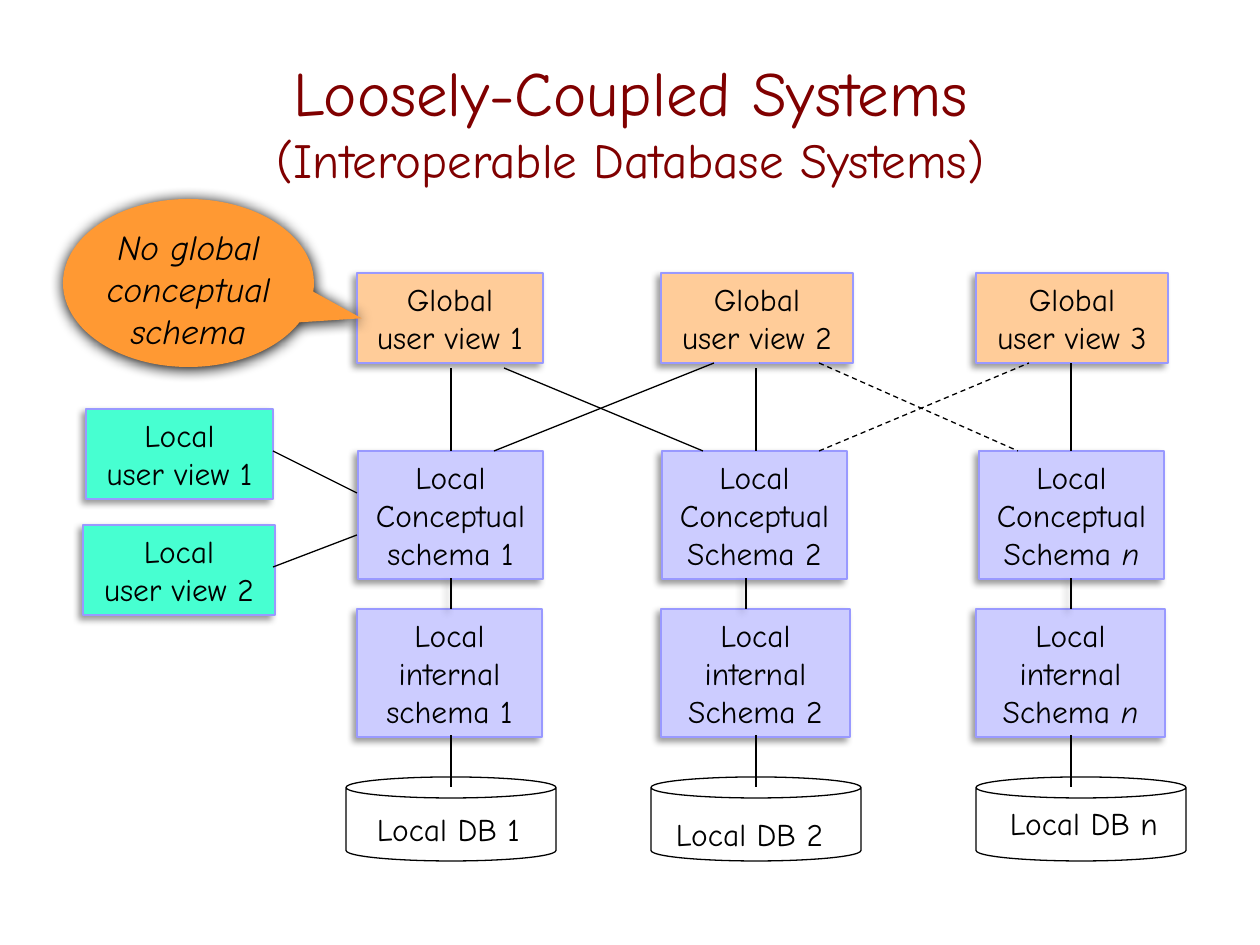
from lxml.etree import SubElement
from pptx import Presentation
from pptx.dml.color import RGBColor
from pptx.enum.dml import MSO_LINE_DASH_STYLE as DASH
from pptx.enum.shapes import MSO_CONNECTOR, MSO_SHAPE
from pptx.enum.text import MSO_ANCHOR, PP_ALIGN
from pptx.oxml.ns import qn
from pptx.util import Pt

PX = 914400 / 126  # EMU per pixel
FONT = "Comic Neue"
BLACK = RGBColor(0x00, 0x00, 0x00)
MAROON = RGBColor(0x80, 0x00, 0x00)
LAVENDER = RGBColor(0xCC, 0xCC, 0xFF)
PERIWINKLE = RGBColor(0x99, 0x99, 0xFF)
PEACH = RGBColor(0xFF, 0xCC, 0x99)
MINT = RGBColor(0x47, 0xFF, 0xD1)
ORANGE = RGBColor(0xFF, 0x99, 0x33)


def px(*lengths):
    return [round(length * PX) for length in lengths]


def write(paragraph, text, size=18, color=BLACK, italic=False, align=PP_ALIGN.CENTER):
    paragraph.alignment = align
    run = paragraph.add_run()
    run.text = text
    font = run.font
    font.name, font.size, font.italic = FONT, Pt(size), italic
    font.color.rgb = color


def set_frame(shape, margins, wrap=True):
    frame = shape.text_frame
    frame.word_wrap = wrap
    frame.vertical_anchor = MSO_ANCHOR.MIDDLE
    (frame.margin_left, frame.margin_top,
     frame.margin_right, frame.margin_bottom) = px(*margins)
    return frame


def set_shadow(shape, alpha=40, blur=4, distance=3, angle=135):
    """Give the shape an outer shadow; alpha 0 means none."""
    properties = shape._element.spPr
    for old in properties.findall(qn("a:effectLst")):
        properties.remove(old)
    effects = SubElement(properties, qn("a:effectLst"))
    if alpha:
        shadow = SubElement(effects, qn("a:outerShdw"), blurRad=str(Pt(blur)),
                            dist=str(Pt(distance)), dir=str(angle * 60000),
                            algn="ctr", rotWithShape="0")
        color = SubElement(shadow, qn("a:srgbClr"), val=str(BLACK))
        SubElement(color, qn("a:alpha"), val=str(alpha * 1000))


def add_box(slide, left, top, width, height, lines, fill, italic_end=""):
    box = slide.shapes.add_shape(MSO_SHAPE.RECTANGLE, *px(left, top, width, height))
    box.fill.solid()
    box.fill.fore_color.rgb = fill
    box.line.color.rgb = PERIWINKLE
    box.line.width = Pt(0.75)
    set_shadow(box)
    frame = set_frame(box, (12, 6, 12, 6), wrap=False)
    for index, line in enumerate(lines):
        paragraph = frame.add_paragraph() if index else frame.paragraphs[0]
        write(paragraph, line)
    if italic_end:
        write(paragraph, italic_end, italic=True)


def add_database(slide, left, label, label_left, label_top, label_width):
    can = slide.shapes.add_shape(MSO_SHAPE.CAN, *px(left, 777, 210, 84))
    can.shadow.inherit = False
    can.fill.background()
    can.line.color.rgb = BLACK
    can.line.width = Pt(0.75)
    box = slide.shapes.add_textbox(*px(label_left, label_top, label_width, 50))
    frame = set_frame(box, (12, 6, 12, 6), wrap=False)
    write(frame.paragraphs[0], label, align=PP_ALIGN.LEFT)


def add_line(slide, x1, y1, x2, y2, dashed=False, shadow=False):
    line = slide.shapes.add_connector(MSO_CONNECTOR.STRAIGHT, *px(x1, y1, x2, y2))
    line.line.color.rgb = BLACK
    line.line.width = Pt(0.75)
    if dashed:
        line.line.dash_style = DASH.DASH
    set_shadow(line, alpha=40 if shadow else 0)


def add_title(slide):
    title = slide.shapes.add_textbox(*px(95, 53, 1071, 136))
    paragraph = set_frame(title, (12, 6, 12, 6)).paragraphs[0]
    write(paragraph, "Loosely-Coupled Systems", size=36, color=MAROON)
    paragraph.add_line_break()
    write(paragraph, "(Interoperable Database Systems)", size=28, color=MAROON)


def add_callout(slide):
    callout = slide.shapes.add_shape(MSO_SHAPE.OVAL_CALLOUT, *px(63, 199, 251, 168))
    callout.adjustments[0], callout.adjustments[1] = 0.69, 0.21
    callout.fill.solid()
    callout.fill.fore_color.rgb = ORANGE
    callout.line.fill.background()
    set_shadow(callout, alpha=100, blur=8.5, distance=1, angle=90)
    frame = set_frame(callout, (0, 23, 0, 13))
    write(frame.paragraphs[0], "No global conceptual schema", size=20, italic=True)


def main():
    presentation = Presentation()
    presentation.slide_width, presentation.slide_height = px(1260, 945)
    slide = presentation.slides.add_slide(presentation.slide_layouts[6])
    add_title(slide)

    # Schema columns: box left, conceptual left, box widths, last line, italic end
    columns = [
        (357, 358, 186, 185, "schema 1", ""),
        (661, 662, 192, 189, "Schema 2", ""),
        (976, 979, 192, 189, "Schema ", "n"),
    ]
    for number, column in enumerate(columns, 1):
        left, concept_left, view_width, internal_width, name, end = column
        add_box(slide, left, 273, view_width, 90,
                ["Global", f"user view {number}"], PEACH)
        add_box(slide, concept_left, 451, 185, 128,
                ["Local", "Conceptual", name], LAVENDER, end)
        add_box(slide, left, 609, internal_width, 128,
                ["Local", "internal", name], LAVENDER, end)

    # Local databases
    add_database(slide, 346, "Local DB 1", 365, 804, 176)
    add_database(slide, 651, "Local DB 2", 664, 809, 181)
    add_database(slide, 976, "Local DB n", 998, 798, 178)

    # Local user views
    add_box(slide, 86, 409, 187, 90, ["Local", "user view 1"], MINT)
    add_box(slide, 83, 525, 192, 90, ["Local", "user view 2"], MINT)
    add_line(slide, 273, 451, 357, 493)
    add_line(slide, 273, 567, 357, 535)

    # Vertical links: x, bottom of the view, x of the schema link
    for x, view_bottom, schema_x in [(451, 368, 451), (756, 368, 746), (1071, 363, 1071)]:
        add_line(slide, x, 451, x, view_bottom)
        add_line(slide, schema_x, 609, schema_x, 578, shadow=True)
        add_line(slide, x, 787, x, 735)

    # Crossing links between views and schemas
    add_line(slide, 494, 451, 714, 363)
    add_line(slide, 504, 368, 703, 451)
    add_line(slide, 819, 451, 1029, 363, dashed=True)
    add_line(slide, 819, 363, 1018, 451, dashed=True)

    add_callout(slide)
    presentation.save("out.pptx")


if __name__ == "__main__":
    main()
